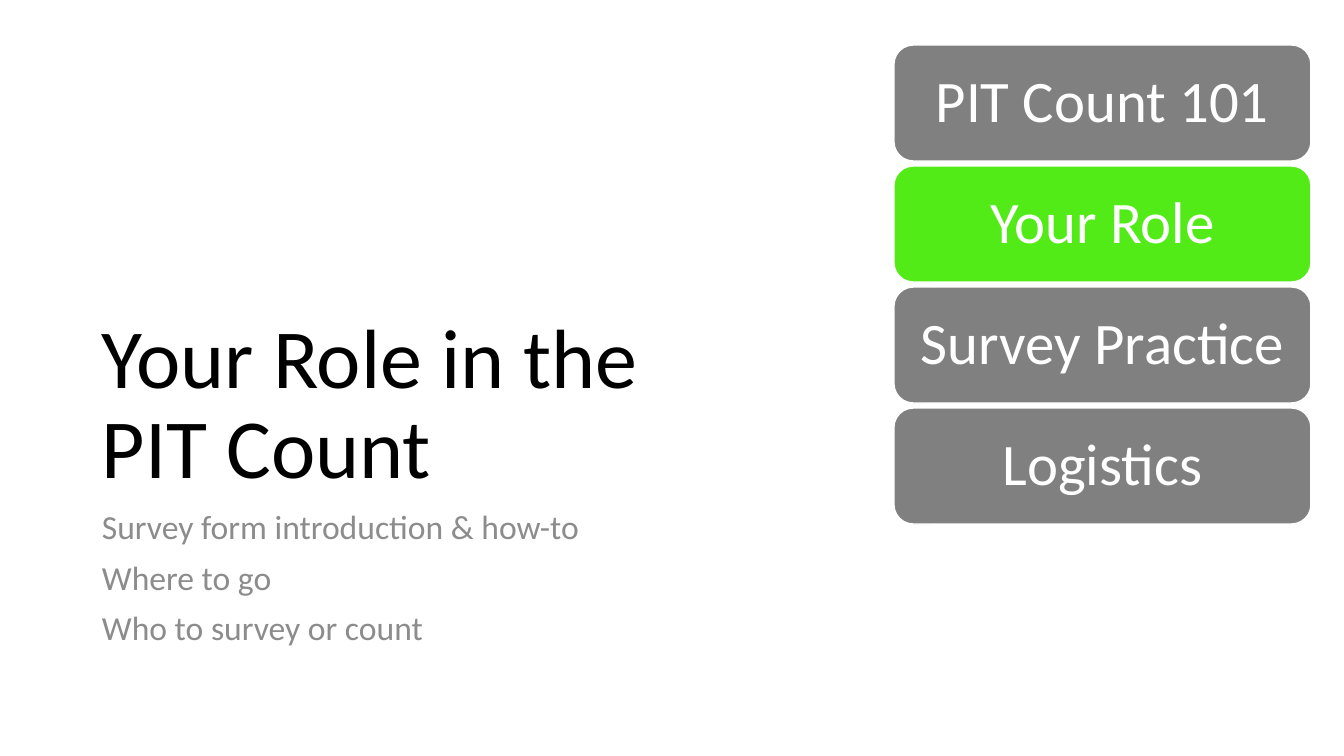
from pptx import Presentation
from pptx.dml.color import RGBColor
from pptx.enum.shapes import MSO_SHAPE
from pptx.enum.text import MSO_ANCHOR, PP_ALIGN
from pptx.util import Pt

TITLE = "Your Role in the\vPIT Count"
TOPICS = ["Survey form introduction & how-to", "Where to go", "Who to survey or count"]
AGENDA = ["PIT Count 101", "Your Role", "Survey Practice", "Logistics"]
CURRENT = "Your Role"

COLORS = {
    "title": "000000",
    "topic": "8C8C8C",
    "idle": "808080",
    "current": "53EB17",
    "white": "FFFFFF",
}
FONT = "Calibri"

SLIDE_W, SLIDE_H = 1344, 756
TEXT_LEFT, TEXT_W = 92, 1159
TITLE_TOP, TITLE_H = 188, 314
TOPICS_TOP, TOPICS_H = 506, 214
AGENDA_LEFT, AGENDA_TOP = 894, 45
BUTTON_W, BUTTON_H, BUTTON_GAP = 417, 116, 5
BUTTON_INSET = 17


def px(length):
    return round(length * 914400 / 100.8)


def color(name):
    return RGBColor.from_string(COLORS[name])


def write(frame, lines, size, color_name, anchor, align=PP_ALIGN.LEFT, before=0):
    """Fill a text frame with one paragraph per line, all in one style."""
    frame.word_wrap = True
    frame.vertical_anchor = anchor
    frame.text = "\n".join(lines)
    for paragraph in frame.paragraphs:
        paragraph.alignment = align
        paragraph.line_spacing = 0.9
        paragraph.space_before = Pt(before)
        for run in paragraph.runs:
            run.font.name = FONT
            run.font.size = Pt(size)
            run.font.color.rgb = color(color_name)


def add_button(slide, label, top):
    button = slide.shapes.add_shape(
        MSO_SHAPE.ROUNDED_RECTANGLE,
        px(AGENDA_LEFT), px(top), px(BUTTON_W), px(BUTTON_H))
    button.shadow.inherit = False
    button.fill.solid()
    button.fill.fore_color.rgb = color("current" if label == CURRENT else "idle")
    button.line.color.rgb = color("white")
    button.line.width = Pt(1)
    frame = button.text_frame
    frame.margin_left = frame.margin_right = px(BUTTON_INSET)
    write(frame, [label], 42, "white", MSO_ANCHOR.MIDDLE, PP_ALIGN.CENTER)


def main():
    deck = Presentation()
    deck.slide_width, deck.slide_height = px(SLIDE_W), px(SLIDE_H)
    slide = deck.slides.add_slide(deck.slide_layouts[6])

    title = slide.shapes.add_textbox(
        px(TEXT_LEFT), px(TITLE_TOP), px(TEXT_W), px(TITLE_H))
    write(title.text_frame, [TITLE], 60, "title", MSO_ANCHOR.BOTTOM)

    topics = slide.shapes.add_textbox(
        px(TEXT_LEFT), px(TOPICS_TOP), px(TEXT_W), px(TOPICS_H))
    write(topics.text_frame, TOPICS, 24, "topic", MSO_ANCHOR.TOP, before=10)

    for row, label in enumerate(AGENDA):
        add_button(slide, label, AGENDA_TOP + row * (BUTTON_H + BUTTON_GAP))

    deck.save("out.pptx")


if __name__ == "__main__":
    main()
